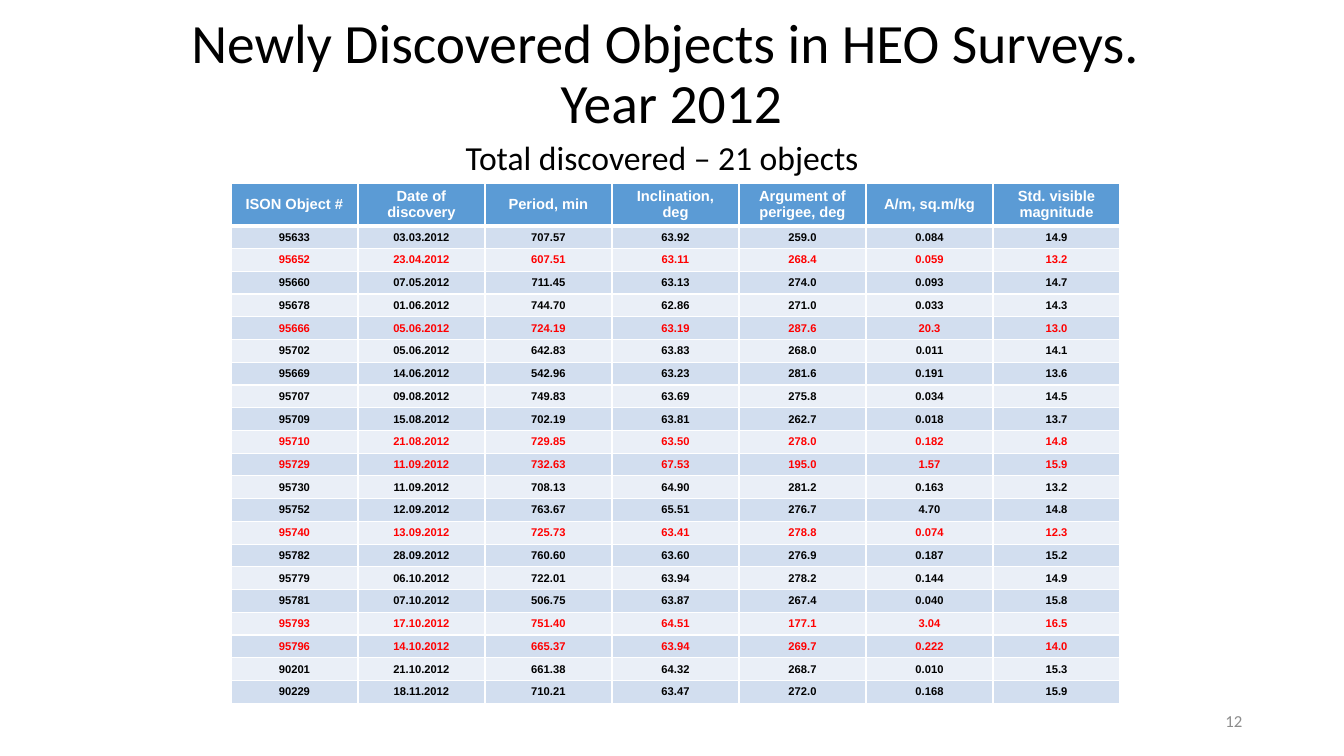
"""Build the slide listing objects newly discovered in the 2012 HEO surveys."""
import dataclasses
import typing

import lxml.etree
import pptx
import pptx.dml.color
import pptx.enum.text
import pptx.oxml.ns
import pptx.util

EMU_PER_PX = 9144
COLUMN_WIDTH = 126
HEADER_HEIGHT = 42
BODY_HEIGHT = 474
WHITE, BLACK, RED, GREY = "FFFFFF", "000000", "FF0000", "8C8C8C"
HEADER_FILL, BAND_FILLS = "5B9BD5", ("D2DEEF", "EAEFF7")
ALIGN = pptx.enum.text.PP_ALIGN
MIDDLE = pptx.enum.text.MSO_ANCHOR.MIDDLE
TOP = pptx.enum.text.MSO_ANCHOR.TOP


@dataclasses.dataclass(frozen=True)
class Caption:
    """A line of text outside the table."""
    text: str
    box: tuple[int, int, int, int]
    size: float
    color: str
    align: ALIGN
    anchor: pptx.enum.text.MSO_ANCHOR
    wrap: bool = True
    line_spacing: float = 1.0


class Discovery(typing.NamedTuple):
    """One discovered object."""
    number: str
    date: str
    period: str
    inclination: str
    perigee: str
    area_to_mass: str
    magnitude: str


CAPTIONS = (
    Caption("Newly Discovered Objects in HEO Surveys. \vYear 2012", (91, 23, 1150, 104),
            39.6, BLACK, ALIGN.CENTER, MIDDLE, line_spacing=0.9),
    Caption("12", (942, 695, 300, 40), 12, GREY, ALIGN.RIGHT, MIDDLE),
    Caption("Total discovered – 21 objects", (452, 131, 414, 51),
            24, BLACK, ALIGN.LEFT, TOP, wrap=False),
)

HEADINGS = Discovery("ISON Object #", "Date of discovery", "Period, min", "Inclination, deg",
                     "Argument of perigee, deg", "A/m, sq.m/kg", "Std. visible magnitude")

DISCOVERIES = (
    Discovery("95633", "03.03.2012", "707.57", "63.92", "259.0", "0.084", "14.9"),
    Discovery("95652", "23.04.2012", "607.51", "63.11", "268.4", "0.059", "13.2"),
    Discovery("95660", "07.05.2012", "711.45", "63.13", "274.0", "0.093", "14.7"),
    Discovery("95678", "01.06.2012", "744.70", "62.86", "271.0", "0.033", "14.3"),
    Discovery("95666", "05.06.2012", "724.19", "63.19", "287.6", "20.3", "13.0"),
    Discovery("95702", "05.06.2012", "642.83", "63.83", "268.0", "0.011", "14.1"),
    Discovery("95669", "14.06.2012", "542.96", "63.23", "281.6", "0.191", "13.6"),
    Discovery("95707", "09.08.2012", "749.83", "63.69", "275.8", "0.034", "14.5"),
    Discovery("95709", "15.08.2012", "702.19", "63.81", "262.7", "0.018", "13.7"),
    Discovery("95710", "21.08.2012", "729.85", "63.50", "278.0", "0.182", "14.8"),
    Discovery("95729", "11.09.2012", "732.63", "67.53", "195.0", "1.57", "15.9"),
    Discovery("95730", "11.09.2012", "708.13", "64.90", "281.2", "0.163", "13.2"),
    Discovery("95752", "12.09.2012", "763.67", "65.51", "276.7", "4.70", "14.8"),
    Discovery("95740", "13.09.2012", "725.73", "63.41", "278.8", "0.074", "12.3"),
    Discovery("95782", "28.09.2012", "760.60", "63.60", "276.9", "0.187", "15.2"),
    Discovery("95779", "06.10.2012", "722.01", "63.94", "278.2", "0.144", "14.9"),
    Discovery("95781", "07.10.2012", "506.75", "63.87", "267.4", "0.040", "15.8"),
    Discovery("95793", "17.10.2012", "751.40", "64.51", "177.1", "3.04", "16.5"),
    Discovery("95796", "14.10.2012", "665.37", "63.94", "269.7", "0.222", "14.0"),
    Discovery("90201", "21.10.2012", "661.38", "64.32", "268.7", "0.010", "15.3"),
    Discovery("90229", "18.11.2012", "710.21", "63.47", "272.0", "0.168", "15.9"),
)
HIGHLIGHTED = {"95652", "95666", "95710", "95729", "95740", "95793", "95796"}


def px(length: int) -> pptx.util.Emu:
    return pptx.util.Emu(length * EMU_PER_PX)


def rgb(color: str) -> pptx.dml.color.RGBColor:
    return pptx.dml.color.RGBColor.from_string(color)


def apply(target: typing.Any, formats: dict[str, typing.Any]) -> None:
    for attribute, value in formats.items():
        setattr(target, attribute, value)


def style_text(frame: typing.Any, align: ALIGN, spacing: float, color: str,
               font_format: dict[str, typing.Any]) -> None:
    for paragraph in frame.paragraphs:
        apply(paragraph, {"alignment": align, "line_spacing": spacing})
        for run in paragraph.runs:
            apply(run.font, font_format)
            run.font.color.rgb = rgb(color)


def draw_caption(slide: typing.Any, caption: Caption) -> None:
    frame = slide.shapes.add_textbox(*map(px, caption.box)).text_frame
    frame.text = caption.text
    apply(frame, {"word_wrap": caption.wrap, "vertical_anchor": caption.anchor})
    style_text(frame, caption.align, caption.line_spacing, caption.color,
               {"name": "Calibri", "size": pptx.util.Pt(caption.size)})


def draw_borders(cell: typing.Any, top: int, bottom: int) -> None:
    properties = cell._tc.get_or_add_tcPr()
    for side, points in {"L": 1, "R": 1, "T": top, "B": bottom}.items():
        line = lxml.etree.SubElement(properties, pptx.oxml.ns.qn(f"a:ln{side}"),
                                     w=str(pptx.util.Pt(points)))
        fill = lxml.etree.SubElement(line, pptx.oxml.ns.qn("a:solidFill"))
        lxml.etree.SubElement(fill, pptx.oxml.ns.qn("a:srgbClr"), val=WHITE)


def draw_row(table: typing.Any, index: int, values: Discovery) -> None:
    if index == 0:
        fill, color, size = HEADER_FILL, WHITE, 10.5
    else:
        fill, size = BAND_FILLS[(index - 1) % 2], 8
        color = RED if values.number in HIGHLIGHTED else BLACK
    for cell, value in zip(table.rows[index].cells, values):
        draw_borders(cell, top=3 if index == 1 else 1, bottom=3 if index == 0 else 1)
        cell.fill.solid()
        cell.fill.fore_color.rgb = rgb(fill)
        cell.text = value
        apply(cell, {"vertical_anchor": MIDDLE, "margin_top": px(3), "margin_bottom": px(3)})
        style_text(cell.text_frame, ALIGN.CENTER, 1.0, color,
                   {"name": "Arial", "size": pptx.util.Pt(size), "bold": True})


def draw_discoveries(slide: typing.Any) -> None:
    rows = (HEADINGS, *DISCOVERIES)
    table = slide.shapes.add_table(
        len(rows), len(HEADINGS), px(229), px(182),
        px(COLUMN_WIDTH * len(HEADINGS)), px(HEADER_HEIGHT + BODY_HEIGHT)).table
    for column in table.columns:
        column.width = px(COLUMN_WIDTH)
    for index, values in enumerate(rows):
        table.rows[index].height = (
            px(BODY_HEIGHT) // len(DISCOVERIES) if index else px(HEADER_HEIGHT))
        draw_row(table, index, values)


def main() -> None:
    presentation = pptx.Presentation()
    apply(presentation, {"slide_width": px(1333), "slide_height": px(750)})
    slide = presentation.slides.add_slide(presentation.slide_layouts[6])
    draw_discoveries(slide)
    for caption in CAPTIONS:
        draw_caption(slide, caption)
    presentation.save("out.pptx")


if __name__ == "__main__":
    main()
